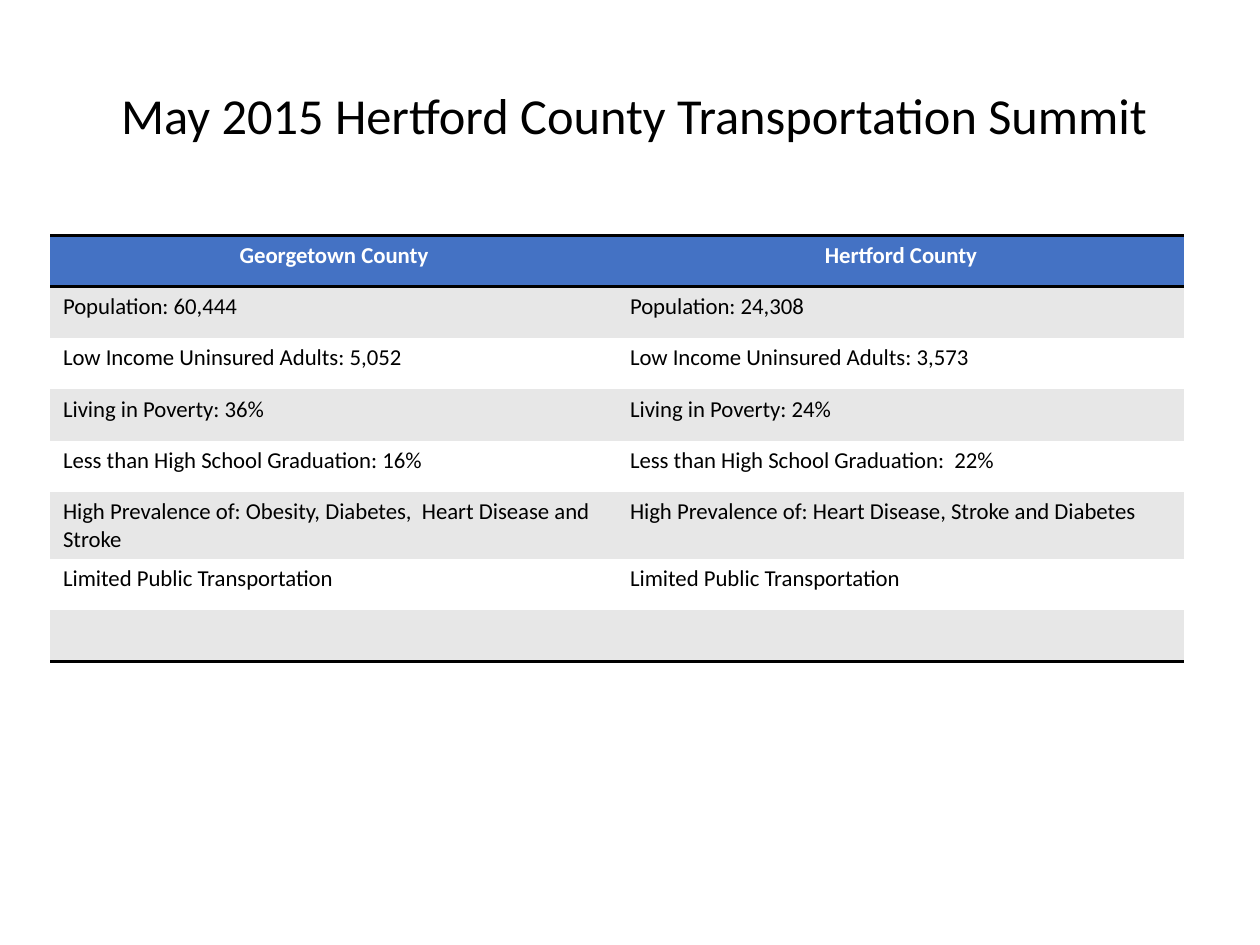
from pptx import Presentation
from pptx.dml.color import RGBColor
from pptx.enum.text import MSO_ANCHOR as Anchor, PP_ALIGN as Align
from pptx.oxml.ns import qn
from pptx.util import Pt
from lxml.etree import SubElement

COLORS = {"ink": "000000", "header": "4472C4", "header_text": "FFFFFF",
          "band": "E7E7E7", "plain": "FFFFFF"}

COUNTIES = [
    ("Georgetown County", "Hertford County"),
    ("Population: 60,444", "Population: 24,308"),
    ("Low Income Uninsured Adults: 5,052", "Low Income Uninsured Adults: 3,573"),
    ("Living in Poverty: 36%", "Living in Poverty: 24%"),
    ("Less than High School Graduation: 16%", "Less than High School Graduation:  22%"),
    ("High Prevalence of: Obesity, Diabetes,  Heart Disease and Stroke",
     "High Prevalence of: Heart Disease, Stroke and Diabetes"),
    ("Limited Public Transportation", "Limited Public Transportation"),
    ("", ""),
]


class SlideBuilder:
    font = "Calibri"
    title_size = 28.8
    table_size = 13
    rule_width = 2

    def __init__(self, slide):
        self.slide = slide

    def add_text(self, paragraph, text, size, color="ink", bold=False, align=Align.LEFT):
        paragraph.alignment = align
        if not text:
            return
        run = paragraph.add_run()
        run.text = text
        run.font.name = self.font
        run.font.size = Pt(size)
        run.font.bold = bold
        run.font.color.rgb = RGBColor.from_string(COLORS[color])

    def title(self, text, left, top, width, height):
        frame = self.slide.shapes.add_textbox(
            Pt(left), Pt(top), Pt(width), Pt(height)).text_frame
        frame.word_wrap = True
        frame.vertical_anchor = Anchor.MIDDLE
        heading = frame.paragraphs[0]
        heading.line_spacing = 0.9
        self.add_text(heading, text, self.title_size, align=Align.CENTER)

    def borders(self, cell, ruled):
        """Rule the sides named in ruled (T, B) and clear the others."""
        properties = cell._tc.get_or_add_tcPr()
        for side in "LRTB":
            line = SubElement(properties, qn(f"a:ln{side}"))
            if side in ruled:
                line.set("w", str(Pt(self.rule_width)))
                fill = SubElement(line, qn("a:solidFill"))
                SubElement(fill, qn("a:srgbClr")).set("val", COLORS["ink"])
            else:
                line.set("w", "0")
                SubElement(line, qn("a:noFill"))

    def table(self, rows, left, top, width, row_height):
        """Header row, then banded rows, with rules around the header and at the end."""
        table = self.slide.shapes.add_table(
            len(rows), len(rows[0]), Pt(left), Pt(top),
            Pt(width), Pt(row_height * len(rows))).table
        table.horz_banding = False
        last = len(rows) - 1
        rules = {0: "TB", 1: "T", last: "B"}
        for r, texts in enumerate(rows):
            table.rows[r].height = Pt(row_height)
            header = r == 0
            background = "header" if header else "band" if r % 2 else "plain"
            for c, text in enumerate(texts):
                cell = table.cell(r, c)
                self.borders(cell, rules.get(r, ""))
                cell.fill.solid()
                cell.fill.fore_color.rgb = RGBColor.from_string(COLORS[background])
                self.add_text(cell.text_frame.paragraphs[0], text, self.table_size,
                              "header_text" if header else "ink", header,
                              Align.CENTER if header else Align.LEFT)


def main():
    deck = Presentation()
    deck.slide_width, deck.slide_height = Pt(720), Pt(540)
    builder = SlideBuilder(deck.slides.add_slide(deck.slide_layouts[6]))
    builder.title("May 2015 Hertford County Transportation Summit", 36, 39.6, 653, 55.4)
    builder.table(COUNTIES, 28.8, 134.6, 648, 29.3)
    deck.save("out.pptx")


if __name__ == "__main__":
    main()
